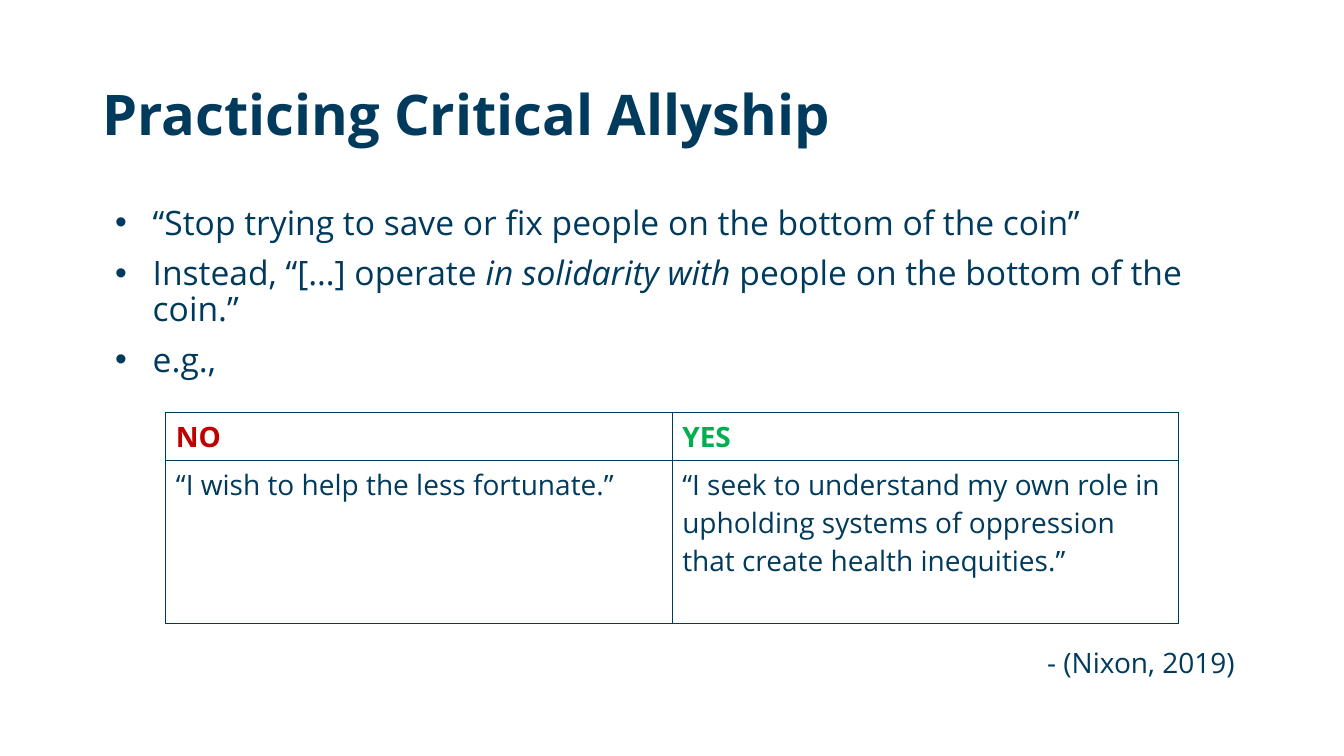
from lxml.etree import SubElement
from pptx import Presentation
from pptx.dml.color import RGBColor
from pptx.enum.text import MSO_ANCHOR, PP_ALIGN
from pptx.oxml.ns import qn
from pptx.util import Cm, Pt

NAVY = RGBColor(0x00, 0x3A, 0x5D)
RED = RGBColor(0xC0, 0x00, 0x00)
GREEN = RGBColor(0x00, 0xB0, 0x50)
FONT = "Open Sans"

TITLE = "Practicing Critical Allyship"
BULLETS = [
    [("“Stop trying to save or fix people on the bottom of the coin”", False)],
    [("Instead, “[…] operate ", False), ("in solidarity with", True),
     (" people on the bottom of the coin.”", False)],
    [("e.g.,", False)],
]
TABLE = [
    ["NO", "YES"],
    ["“I wish to help the less fortunate.”",
     "“I seek to understand my own role in upholding systems of oppression "
     "that create health inequities.”"],
]
HEADER_COLORS = [RED, GREEN]
CITATION = "- (Nixon, 2019)"

LEFT, WIDTH = 2.33, 29.21
COL_WIDTH = 12.76
ROW_HEIGHTS = [1.21, 4.12]


def style(r, size, color=NAVY, bold=False, italic=False):
    r.font.name = FONT
    r.font.size = Pt(size)
    r.font.color.rgb = color
    r.font.bold = bold
    r.font.italic = italic


def add_box(slide, left, top, width, height, anchor=MSO_ANCHOR.TOP):
    tf = slide.shapes.add_textbox(Cm(left), Cm(top), Cm(width), Cm(height)).text_frame
    tf.word_wrap = True
    tf.vertical_anchor = anchor
    tf.paragraphs[0].line_spacing = 0.9
    return tf


def add_bullet(p):
    pPr = p._p.get_or_add_pPr()
    pPr.set("marL", str(Cm(1.27)))
    pPr.set("indent", str(-Cm(0.95)))
    SubElement(pPr, qn("a:buFont"), typeface="Arial")
    SubElement(pPr, qn("a:buChar"), char="•")


def add_borders(cell):
    tcPr = cell._tc.get_or_add_tcPr()
    for i, side in enumerate(("lnL", "lnR", "lnT", "lnB")):
        ln = tcPr.makeelement(qn(f"a:{side}"), {"w": str(Pt(1))})
        fill = SubElement(ln, qn("a:solidFill"))
        SubElement(fill, qn("a:srgbClr"), val=str(NAVY))
        tcPr.insert(i, ln)


prs = Presentation()
prs.slide_width, prs.slide_height = Cm(33.87), Cm(19.05)
slide = prs.slides.add_slide(prs.slide_layouts[6])

tf = add_box(slide, LEFT, 1.01, WIDTH, 3.68, MSO_ANCHOR.MIDDLE)
tf.text = TITLE
style(tf.paragraphs[0].runs[0], 40, bold=True)

tf = add_box(slide, LEFT, 5.07, WIDTH, 5)
for i, parts in enumerate(BULLETS):
    p = tf.add_paragraph() if i else tf.paragraphs[0]
    p.line_spacing = 0.9
    if i:
        p.space_before = Pt(10)
    add_bullet(p)
    for text, italic in parts:
        r = p.add_run()
        r.text = text
        style(r, 24, italic=italic)

table = slide.shapes.add_table(
    len(TABLE), len(TABLE[0]), Cm(4.18), Cm(10.39),
    Cm(COL_WIDTH * len(TABLE[0])), Cm(sum(ROW_HEIGHTS))).table
for column in table.columns:
    column.width = Cm(COL_WIDTH)
for i, texts in enumerate(TABLE):
    table.rows[i].height = Cm(ROW_HEIGHTS[i])
    for j, text in enumerate(texts):
        cell = table.cell(i, j)
        cell.text = text
        cell.fill.background()
        add_borders(cell)
        header = i == 0
        style(cell.text_frame.paragraphs[0].runs[0], 20,
              HEADER_COLORS[j] if header else NAVY, bold=header)

tf = add_box(slide, 23.37, 16.13, 8, 1.2)
tf.text = CITATION
tf.paragraphs[0].alignment = PP_ALIGN.RIGHT
style(tf.paragraphs[0].runs[0], 20)

prs.save("out.pptx")
